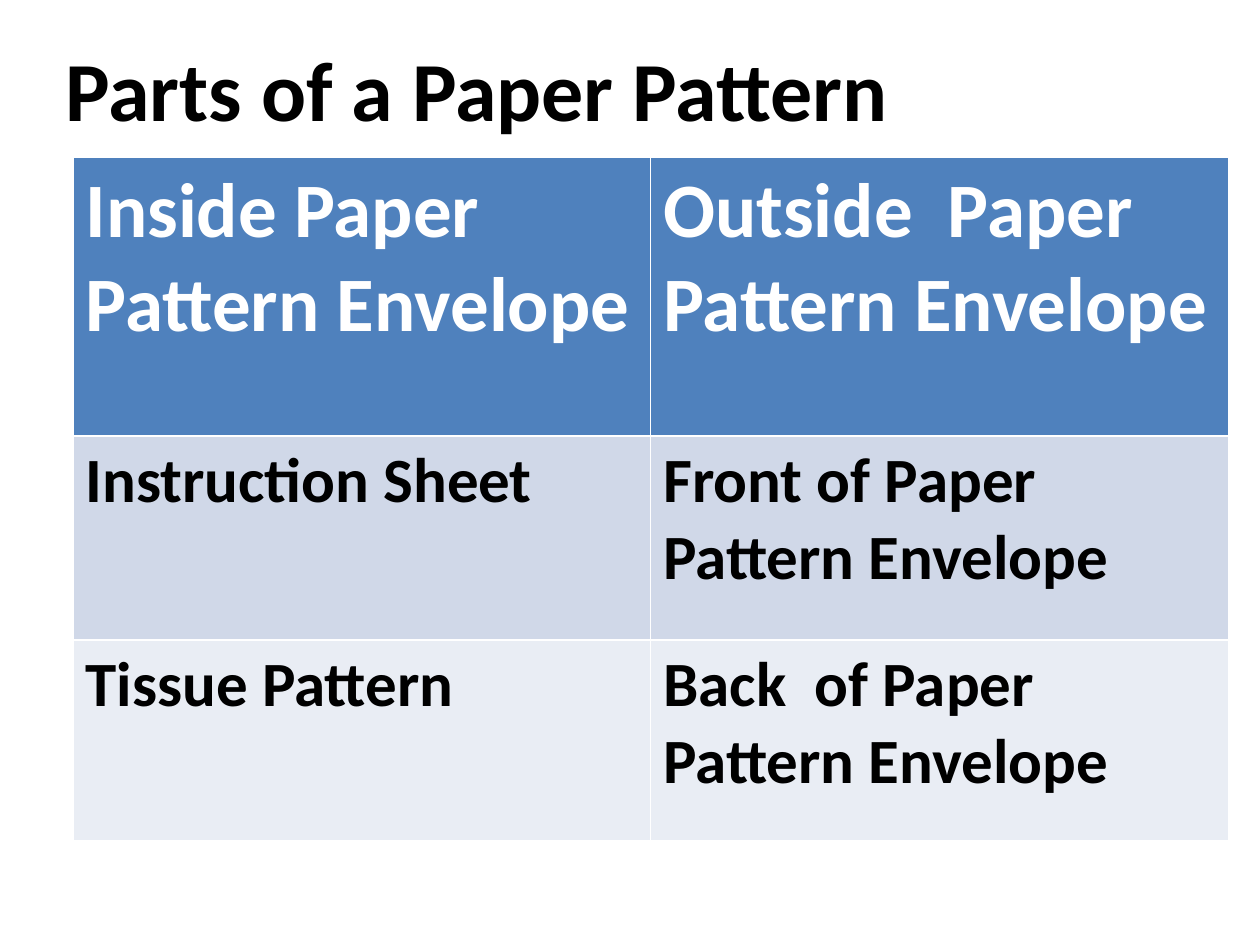
import pptx
import pptx.dml.color
import pptx.util

WIDTH, HEIGHT = 10, 7.5
inches = pptx.util.Inches


def style(paragraph, size, color):
    font = paragraph.font if not paragraph.runs else paragraph.runs[0].font
    font.name = "Calibri"
    font.size = pptx.util.Pt(size)
    font.bold = True
    font.color.rgb = pptx.dml.color.RGBColor.from_string(color)


deck = pptx.Presentation()
deck.slide_width, deck.slide_height = inches(WIDTH), inches(HEIGHT)
slide = deck.slides.add_slide(deck.slide_layouts[6])

heading = slide.shapes.add_textbox(
    inches(0.42), inches(0.25), inches(9.17), inches(6.5)
).text_frame
heading.word_wrap = True
heading.text = "Parts of a Paper Pattern"
style(heading.paragraphs[0], 48, "000000")

# Each row: height, fill, text size, text colour, cell texts
pattern_parts = [
    (2.21, "4F81BD", 44, "FFFFFF",
     ["Inside Paper Pattern Envelope", "Outside  Paper Pattern Envelope"]),
    (1.62, "D0D8E8", 36, "000000",
     ["Instruction Sheet", "Front of Paper Pattern Envelope"]),
    (1.59, "E9EDF4", 36, "000000",
     ["Tissue Pattern", "Back  of Paper Pattern Envelope"]),
]
parts_height = sum(row[0] for row in pattern_parts)

# The default table style supplies the white rules between the cells
parts_table = slide.shapes.add_table(
    len(pattern_parts), 2,
    inches(0.58), inches(HEIGHT / 6), inches(9.17), inches(parts_height),
).table

for r, (height, fill, size, color, texts) in enumerate(pattern_parts):
    parts_table.rows[r].height = inches(height)
    for c, text in enumerate(texts):
        cell = parts_table.cell(r, c)
        cell.fill.solid()
        cell.fill.fore_color.rgb = pptx.dml.color.RGBColor.from_string(fill)
        cell.text_frame.text = text
        style(cell.text_frame.paragraphs[0], size, color)

deck.save("out.pptx")
